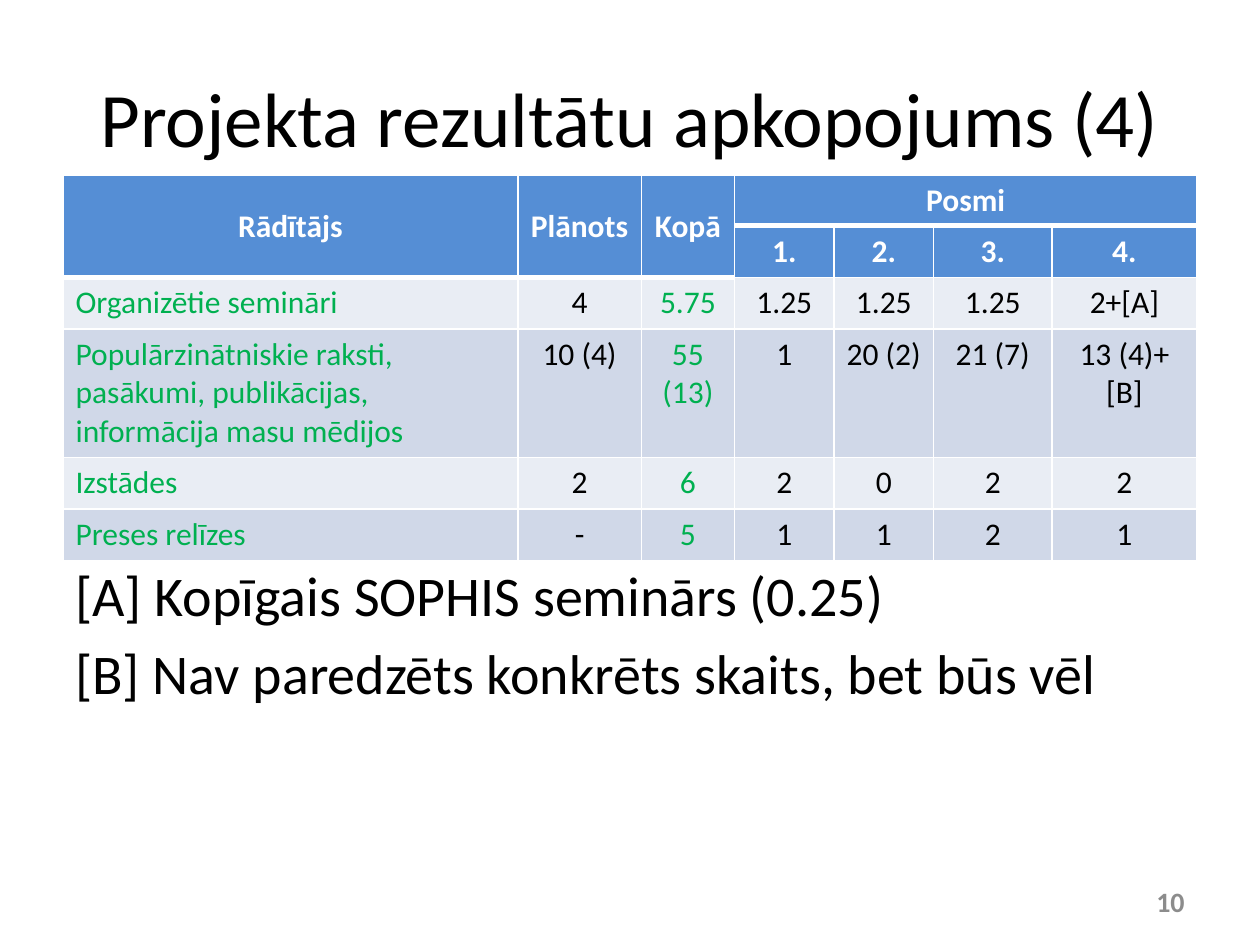
from lxml import etree
from pptx import Presentation
from pptx.dml.color import RGBColor
from pptx.enum import text
from pptx.oxml import ns
from pptx.util import Inches, Pt

CENTER, LEFT, RIGHT = text.PP_ALIGN.CENTER, text.PP_ALIGN.LEFT, text.PP_ALIGN.RIGHT
MIDDLE, TOP = text.MSO_ANCHOR.MIDDLE, text.MSO_ANCHOR.TOP
WHITE, BLACK, GREEN, GREY = "FFFFFF", "000000", "00B050", "8C8C8C"
HEADER, LIGHT, DARK = "558ED5", "E9EDF4", "D0D8E8"


def rgb(value):
    return RGBColor.from_string(value)


def write(tf, lines, size, color, align=LEFT, bold=False):
    tf.word_wrap = True
    for i, line in enumerate(lines):
        p = tf.paragraphs[0] if i == 0 else tf.add_paragraph()
        p.text = line
        p.alignment = align
        p.space_before = Pt(0.2 * size if i else 0)
        p.font.name, p.font.size, p.font.bold = "Calibri", Pt(size), bold
        p.font.color.rgb = rgb(color)


prs = Presentation()
prs.slide_width, prs.slide_height = Inches(10), Inches(7.5)
s = prs.slides.add_slide(prs.slide_layouts[6])

# Title, notes below the table, slide number
boxes = [
    ((0.5, 0.3, 9, 1.25), ["Projekta rezultātu apkopojums (4)"],
     44, BLACK, CENTER, False, MIDDLE),
    ((0.5, 4.4, 9, 2.3), ["[A] Kopīgais SOPHIS seminārs (0.25)",
                          "[B] Nav paredzēts konkrēts skaits, bet būs vēl"],
     32, BLACK, LEFT, False, TOP),
    ((7.17, 6.95, 2.33, 0.4), ["10"], 16, GREY, RIGHT, True, MIDDLE),
]
for place, lines, size, color, align, bold, anchor in boxes:
    tf = s.shapes.add_textbox(*[Inches(v) for v in place]).text_frame
    tf.vertical_anchor = anchor
    write(tf, lines, size, color, align, bold)

# Results table
rows = [
    ["Rādītājs", "Plānots", "Kopā", "Posmi", "", "", ""],
    ["", "", "", "1.", "2.", "3.", "4."],
    ["Organizētie semināri", "4", "5.75", "1.25", "1.25", "1.25", "2+[A]"],
    ["Populārzinātniskie raksti, pasākumi, publikācijas, informācija masu mēdijos",
     "10 (4)", "55 (13)", "1", "20 (2)", "21 (7)", "13 (4)+[B]"],
    ["Izstādes", "2", "6", "2", "0", "2", "2"],
    ["Preses relīzes", "-", "5", "1", "1", "2", "1"],
]
widths = [3.61, 0.98, 0.74, 0.79, 0.79, 0.94, 1.15]
heights = [0.39, 0.41, 0.41, 1.02, 0.41, 0.41]
tbl = s.shapes.add_table(len(rows), len(widths), Inches(0.5), Inches(1.39),
                         Inches(sum(widths)), Inches(sum(heights))).table
for col, width in zip(tbl.columns, widths):
    col.width = Inches(width)
for row, height in zip(tbl.rows, heights):
    row.height = Inches(height)

for r, values in enumerate(rows):
    for c, value in enumerate(values):
        cell = tbl.cell(r, c)
        head = r < 2
        color = WHITE if head else GREEN if c in (0, 2) else BLACK
        write(cell.text_frame, [value], 18, color,
              CENTER if head or c else LEFT, head)
        cell.vertical_anchor = MIDDLE if head else TOP

        # White grid, thicker under the top header cells
        thick_bottom = r == 0 or (r == 1 and c < 3)
        thick_top = r == 1 and c >= 3 or r == 2 and c < 3
        props = cell._tc.get_or_add_tcPr()
        for side, thick in (("L", False), ("R", False),
                            ("T", thick_top), ("B", thick_bottom)):
            ln = etree.SubElement(props, ns.qn("a:ln" + side),
                                  w=str(Pt(3 if thick else 1)))
            fill = etree.SubElement(ln, ns.qn("a:solidFill"))
            etree.SubElement(fill, ns.qn("a:srgbClr"), val=WHITE)
        cell.fill.solid()
        cell.fill.fore_color.rgb = rgb(HEADER if head else DARK if r % 2 else LIGHT)

# Merged header cells
for c in range(3):
    tbl.cell(0, c).merge(tbl.cell(1, c))
tbl.cell(0, 3).merge(tbl.cell(0, 6))

prs.save("out.pptx")
